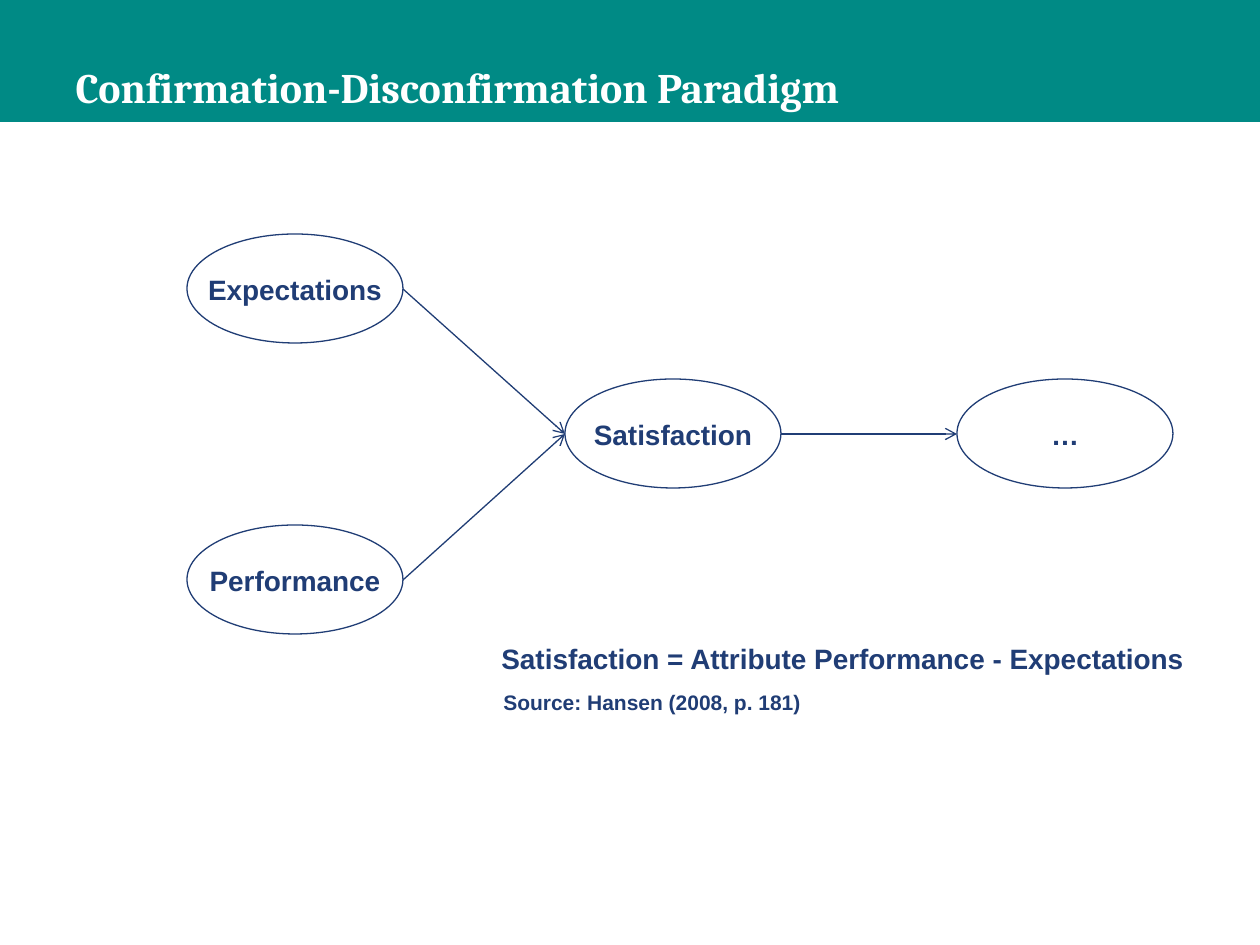
from lxml.etree import SubElement
from pptx import Presentation
from pptx.dml.color import RGBColor as Rgb
from pptx.enum.shapes import MSO_CONNECTOR as Link, MSO_SHAPE as Kind
from pptx.enum.text import MSO_ANCHOR as Anchor, MSO_AUTO_SIZE as Fit, PP_ALIGN as Align
from pptx.oxml.ns import qn
from pptx.util import Pt

SCALE = 914400 / 126
HUE = {"teal": "008A85", "navy": "203D75", "white": "FFFFFF"}
OVAL_W, OVAL_H = 216, 109
OVALS = {
    "Expectations": (187, 234),
    "Performance": (187, 525),
    "Satisfaction": (565, 379),
    "…": (957, 379),
}
ARROWS = [
    ("Expectations", "Satisfaction"),
    ("Performance", "Satisfaction"),
    ("Satisfaction", "…"),
]
BODY = {"name": "Arial", "size": Pt(16), "bold": True}
SMALL = {**BODY, "size": Pt(12)}
HEAD = {"name": "Cambria", "size": Pt(24), "bold": True}


def px(*nums):
    return [round(num * SCALE) for num in nums]


def color(key):
    return Rgb.from_string(HUE[key])


def set_all(item, vals):
    for key, val in vals.items():
        setattr(item, key, val)


def set_line(item, hue, width):
    item.line.color.rgb = color(hue)
    item.line.width = Pt(width)


def write(frame, text, form, hue, align, **opts):
    set_all(frame, {"word_wrap": True, "auto_size": Fit.SHAPE_TO_FIT_TEXT, **opts})
    frame.text = text
    para = frame.paragraphs[0]
    para.alignment = align
    set_all(para.font, form)
    para.font.color.rgb = color(hue)


def add_text(slide, text, box, form=BODY, align=Align.LEFT, **opts):
    frame = slide.shapes.add_textbox(*px(*box)).text_frame
    write(frame, text, form, "navy", align, **opts)


def add_shape(slide, kind, box, hue, fill=None):
    shape = slide.shapes.add_shape(kind, *px(*box))
    shape.shadow.inherit = False
    set_line(shape, hue, 0.75)
    if fill:
        shape.fill.solid()
        shape.fill.fore_color.rgb = color(fill)
    else:
        shape.fill.background()


def add_oval(slide, text, left, top):
    add_shape(slide, Kind.OVAL, (left, top, OVAL_W, OVAL_H), "navy")
    add_text(slide, text, (left, top + 32, OVAL_W, 46), align=Align.CENTER)


def add_line(slide, ends, hue, width, arrow=False):
    line = slide.shapes.add_connector(Link.STRAIGHT, *px(*ends))
    set_line(line, hue, width)
    if arrow:
        SubElement(line.line._get_or_add_ln(), qn("a:tailEnd"), type="arrow")
    SubElement(line._element.spPr, qn("a:effectLst"))


def add_arrow(slide, start, end):
    (x1, y1), (x2, y2) = OVALS[start], OVALS[end]
    mid = OVAL_H // 2 + 1
    add_line(slide, (x1 + OVAL_W, y1 + mid, x2, y2 + mid), "navy", 0.75, True)


def add_title(slide, text, box):
    title = slide.shapes.title
    set_all(title, dict(zip(("left", "top", "width", "height"), px(*box))))
    write(title.text_frame, text, HEAD, "white", Align.LEFT,
          auto_size=Fit.NONE, vertical_anchor=Anchor.MIDDLE)
    title.element.getparent().append(title.element)


def main():
    deck = Presentation()
    deck.slide_width, deck.slide_height = px(1260, 945)
    slide = deck.slides.add_slide(deck.slide_layouts[5])
    add_shape(slide, Kind.RECTANGLE, (0, 0, 1260, 120), "teal", "teal")
    add_line(slide, (0, 121, 1260, 121), "teal", 0.5)
    add_title(slide, "Confirmation-Disconfirmation Paradigm", (63, 58, 974, 57))
    for text, spot in OVALS.items():
        add_oval(slide, text, *spot)
    for start, end in ARROWS:
        add_arrow(slide, start, end)
    add_text(slide, "Satisfaction = Attribute Performance - Expectations",
             (489, 635, 717, 46), word_wrap=False)
    add_text(slide, "Source: Hansen (2008, p. 181)", (491, 683, 367, 38), SMALL)
    deck.save("out.pptx")


if __name__ == "__main__":
    main()
